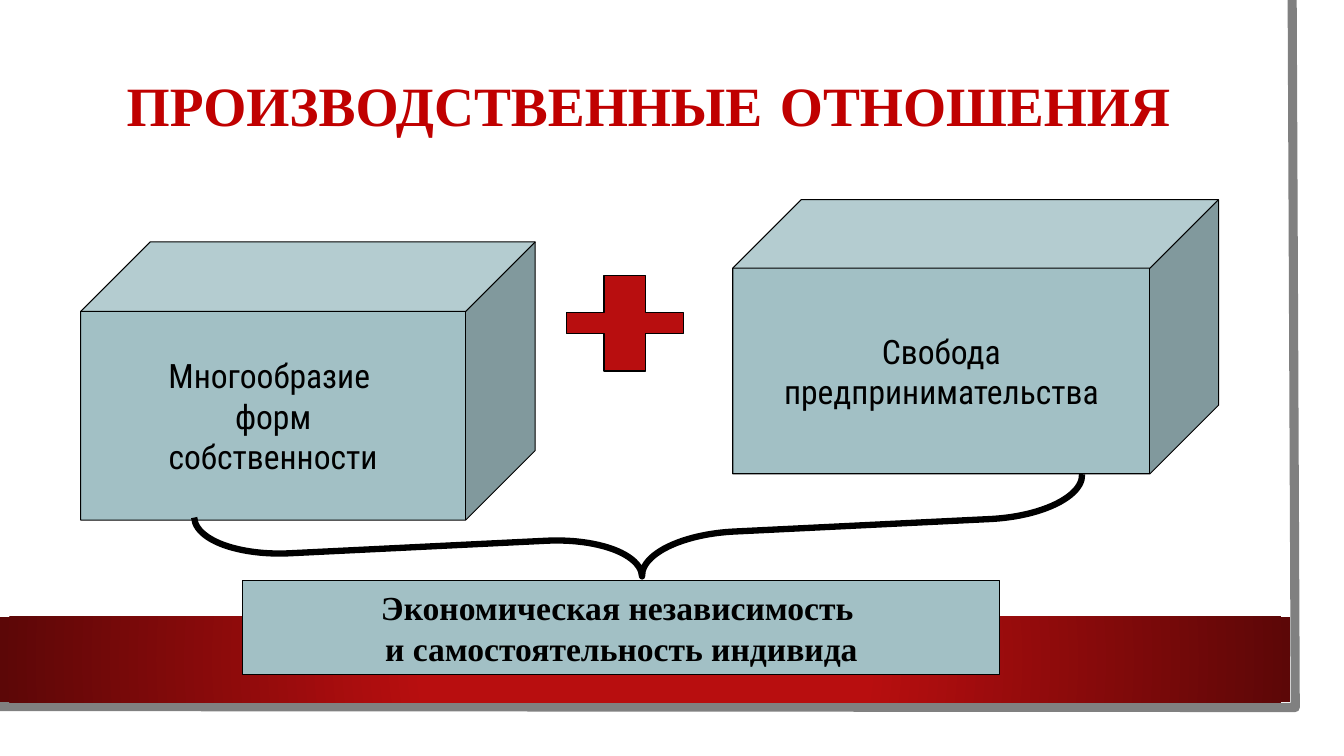
from dataclasses import dataclass
from typing import NamedTuple

from pptx import Presentation
from pptx.dml.color import RGBColor
from pptx.enum.shapes import MSO_SHAPE
from pptx.enum.text import MSO_ANCHOR, PP_ALIGN
from pptx.oxml import parse_xml
from pptx.oxml.ns import nsdecls
from pptx.util import Pt


@dataclass(frozen=True)
class Theme:
    """Colours, fonts and type sizes."""
    red: str = "B80E0F"
    dark: str = "5C0707"
    head: str = "C00000"
    blue: str = "A2C0C5"
    ink: str = "000000"
    edge: str = "808080"
    serif: str = "Times New Roman"
    sans: str = "Roboto Condensed"
    title: float = 39.6
    gap: float = 48.6
    body: float = 24


class Box(NamedTuple):
    """A preset shape with its place, look and text."""
    kind: MSO_SHAPE
    left: float
    top: float
    width: float
    height: float
    fill: str | None = None
    line: float = 0.75
    adj: tuple[float, ...] = ()
    turn: float = 0
    lines: tuple[str, ...] = ()
    font: str = ""
    bold: bool = False


T = Theme()
WIDE, HIGH = 960, 540

BOXES = [
    Box(MSO_SHAPE.CUBE, 57.6, 172.8, 324.7, 198.7, T.blue, adj=(0.25,),
        lines=("Многообразие ", "форм", "собственности"), font=T.sans),
    Box(MSO_SHAPE.CROSS, 404.6, 196.6, 83.5, 68.4, T.red, adj=(0.393,)),
    Box(MSO_SHAPE.CUBE, 523.4, 142.6, 347, 195.8, T.blue, adj=(0.25,),
        lines=("Свобода", "предпринимательства"), font=T.sans),
    Box(MSO_SHAPE.RIGHT_BRACE, 428.4, 65.5, 57.6, 635, line=4.5,
        adj=(1.167, 0.5), turn=87.2),
    Box(MSO_SHAPE.RECTANGLE, 173.5, 414.7, 540.7, 67, T.blue,
        lines=("Экономическая независимость ", "и самостоятельность индивида"),
        font=T.serif, bold=True),
]


def tint(name: str) -> RGBColor:
    """Turn a hex name into a colour."""
    return RGBColor.from_string(name)


def write(para, text: str, *, font: str, size: float, color: str = T.ink,
          bold: bool = False) -> None:
    """Add one centred run to a paragraph."""
    para.alignment = PP_ALIGN.CENTER
    run = para.add_run()
    run.text = text
    run.font.name = font
    run.font.size = Pt(size)
    run.font.bold = bold
    run.font.color.rgb = tint(color)


def draw(shapes, box: Box) -> None:
    """Draw one preset shape and its text."""
    shape = shapes.add_shape(box.kind, Pt(box.left), Pt(box.top),
                             Pt(box.width), Pt(box.height))
    shape.shadow.inherit = False
    shape.rotation = box.turn
    for i, value in enumerate(box.adj):
        shape.adjustments[i] = value
    if box.fill:
        shape.fill.solid()
        shape.fill.fore_color.rgb = tint(box.fill)
    else:
        shape.fill.background()
    shape.line.color.rgb = tint(T.ink)
    shape.line.width = Pt(box.line)
    if not box.lines:
        return
    frame = shape.text_frame
    frame.word_wrap = False
    frame.vertical_anchor = MSO_ANCHOR.MIDDLE
    for i, text in enumerate(box.lines):
        para = frame.add_paragraph() if i else frame.paragraphs[0]
        write(para, text, font=box.font, size=T.body, bold=box.bold)


def frame_edge(shapes) -> None:
    """Draw the grey edge at the right and the bottom."""
    pen = shapes.build_freeform(Pt(923), 0)
    pen.add_line_segments([(Pt(925.2), Pt(505.4)), (0, Pt(504.7))], close=False)
    edge = pen.convert_to_shape()
    edge.shadow.inherit = False
    edge.fill.background()
    edge.line.color.rgb = tint(T.edge)
    edge.line.width = Pt(6.5)


def band(shapes) -> None:
    """Draw the red band with its radial gradient."""
    shape = shapes.add_shape(MSO_SHAPE.RECTANGLE, 0, Pt(440.6), Pt(921.6), Pt(61.2))
    shape.shadow.inherit = False
    shape.line.fill.background()
    shape.fill.gradient()
    stops = "".join(f'<a:gs pos="{pos}000"><a:srgbClr val="{color}"/></a:gs>'
                    for pos, color in ((34, T.red), (100, T.dark)))
    grad = parse_xml(
        f'<a:gradFill {nsdecls("a")} rotWithShape="1"><a:gsLst>{stops}</a:gsLst>'
        '<a:path path="circle"><a:fillToRect l="50000" t="50000" r="50000" b="50000"/>'
        '</a:path></a:gradFill>')
    props = shape.element.spPr
    old = props.find("{*}gradFill")
    props.replace(old, grad)


def title(shapes) -> None:
    """Write the slide title."""
    frame = shapes.add_textbox(Pt(54), Pt(54), Pt(818.6), Pt(41.8)).text_frame
    frame.word_wrap = True
    frame.vertical_anchor = MSO_ANCHOR.MIDDLE
    para = frame.paragraphs[0]
    para.line_spacing = 0.9
    for text, size in (("ПРОИЗВОДСТВЕННЫЕ", T.title), (" ", T.gap),
                       ("ОТНОШЕНИЯ", T.title)):
        write(para, text, font=T.serif, size=size, color=T.head, bold=True)


def main() -> None:
    """Build the slide and save it."""
    deck = Presentation()
    deck.slide_width, deck.slide_height = Pt(WIDE), Pt(HIGH)
    shapes = deck.slides.add_slide(deck.slide_layouts[6]).shapes
    frame_edge(shapes)
    band(shapes)
    title(shapes)
    for box in BOXES:
        draw(shapes, box)
    deck.save("out.pptx")


if __name__ == "__main__":
    main()
